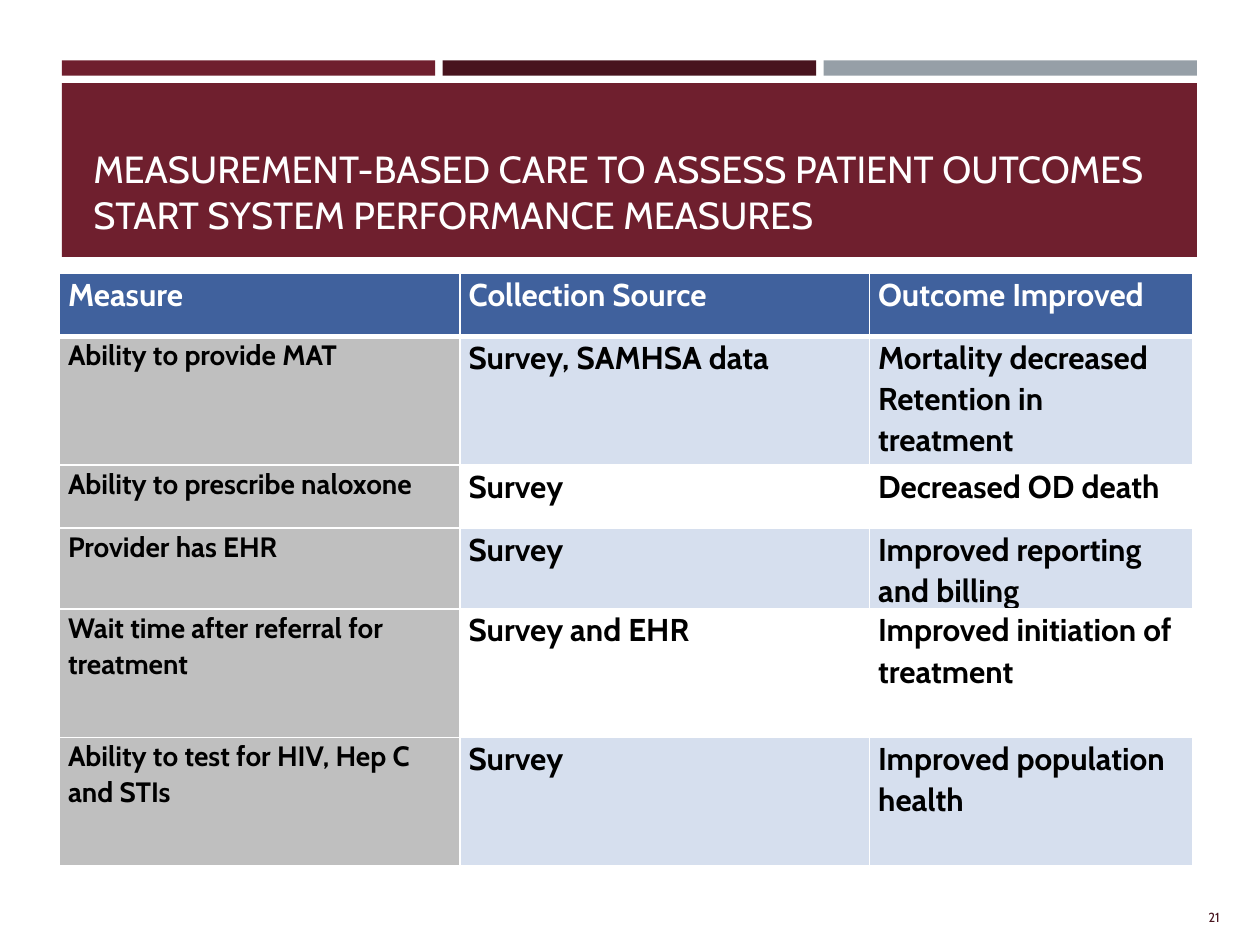
"""Build the slide on patient outcome measures for measurement-based care."""
from copy import deepcopy
from dataclasses import dataclass

from lxml.etree import SubElement
from pptx import Presentation
from pptx.dml.color import RGBColor
from pptx.enum.shapes import MSO_SHAPE
from pptx.enum.text import MSO_ANCHOR, MSO_AUTO_SIZE, PP_ALIGN
from pptx.oxml.ns import qn
from pptx.util import Inches, Pt


@dataclass(frozen=True)
class Theme:
    font: str = "Cabin"
    wine: str = "6F1F2E"
    dark_wine: str = "48141E"
    steel: str = "969FA7"
    header: str = "40619D"
    measure: str = "BFBFBF"
    band: str = "D6DFEE"
    white: str = "FFFFFF"
    black: str = "000000"
    title_size: float = 21.6
    table_size: float = 18
    measure_size: float = 16
    number_size: float = 7.5
    rule: float = 1
    header_rule: float = 3


GRID_COLUMNS, GRID_ROWS = 100, 75

MEASURES = [
    ("Measure", "Collection Source", "Outcome Improved"),
    ("Ability to provide MAT", "Survey, SAMHSA data",
     ["Mortality decreased", "Retention in treatment"]),
    ("Ability to prescribe naloxone", "Survey", "Decreased OD death"),
    ("Provider has EHR", "Survey", "Improved reporting and billing"),
    ("Wait time after referral for treatment", "Survey and EHR",
     "Improved initiation of treatment"),
    ("Ability to test for HIV, Hep C and STIs", "Survey", "Improved population health"),
]


def write(frame, text, *, font, size, color, bold=False, align=PP_ALIGN.LEFT, spacing=1.0):
    """Fill a text frame, one paragraph per list item, with one format."""
    frame.word_wrap = True
    for index, line in enumerate([text] if isinstance(text, str) else text):
        paragraph = frame.add_paragraph() if index else frame.paragraphs[0]
        paragraph.text = line
        paragraph.alignment = align
        paragraph.line_spacing = spacing
        paragraph.space_before = paragraph.space_after = Pt(0)
        for run in paragraph.runs:
            run.font.name, run.font.size, run.font.bold = font, Pt(size), bold
            run.font.color.rgb = RGBColor.from_string(color)
        for line_break in paragraph._p.findall(qn("a:br")):
            line_break.append(deepcopy(paragraph.runs[0]._r.rPr))


class SlideBuilder:
    """Place styled elements on the current slide by grid columns and rows."""

    def __init__(self, deck, theme):
        self.theme = theme
        self.column = deck.slide_width / GRID_COLUMNS
        self.row = deck.slide_height / GRID_ROWS
        self.slide = deck.slides.add_slide(deck.slide_layouts[5])

    def box(self, left, top, width, height):
        """Turn grid units into slide lengths."""
        return (round(left * self.column), round(top * self.row),
                round(width * self.column), round(height * self.row))

    def bar(self, *place, color):
        """Add a plain filled rectangle behind the title."""
        bar = self.slide.shapes.add_shape(MSO_SHAPE.RECTANGLE, *self.box(*place))
        bar.shadow.inherit = False
        bar.fill.solid()
        bar.fill.fore_color.rgb = RGBColor.from_string(color)
        bar.line.fill.background()

    def title(self, text, *place):
        """Move the title placeholder to the front and format it."""
        title = self.slide.shapes.title
        title.left, title.top, title.width, title.height = self.box(*place)
        self.slide.shapes._spTree.append(title._element)
        title.text_frame.auto_size = MSO_AUTO_SIZE.NONE
        title.text_frame.vertical_anchor = MSO_ANCHOR.BOTTOM
        write(title.text_frame, text, font=self.theme.font,
              size=self.theme.title_size, color=self.theme.white)

    def page_number(self, text, *place):
        """Add the slide number in the corner."""
        number = self.slide.shapes.add_textbox(*self.box(*place))
        number.text_frame.vertical_anchor = MSO_ANCHOR.MIDDLE
        write(number.text_frame, text, font=self.theme.font, size=self.theme.number_size,
              color=self.theme.dark_wine, align=PP_ALIGN.RIGHT)

    def table(self, records, left, top, widths, heights):
        """Add the table with a header, a shaded first column and banded rows."""
        table = self.slide.shapes.add_table(
            len(heights), len(widths),
            *self.box(left, top, sum(widths), sum(heights))).table
        for column, width in zip(table.columns, widths):
            column.width = round(width * self.column)
        for row, height in zip(table.rows, heights):
            row.height = round(height * self.row)
        for r, record in enumerate(records):
            for c, text in enumerate(record):
                self.cell(table.cell(r, c), text, r, c)

    def cell(self, cell, text, r, c):
        """Write, border and fill one table cell."""
        theme = self.theme
        is_header, is_measure = r == 0, r > 0 and c == 0
        cell.margin_left = cell.margin_right = Inches(0.07)
        cell.margin_top = cell.margin_bottom = 0
        write(cell.text_frame, text, font=theme.font, bold=True, spacing=1.07,
              size=theme.measure_size if is_measure else theme.table_size,
              color=theme.white if is_header else theme.black)
        rules = {"lnL": theme.rule, "lnR": theme.rule,
                 "lnT": theme.header_rule if r == 1 else theme.rule,
                 "lnB": theme.header_rule if is_header else theme.rule}
        for side, weight in rules.items():
            line = SubElement(cell._tc.get_or_add_tcPr(), qn(f"a:{side}"), w=str(Pt(weight)))
            SubElement(SubElement(line, qn("a:solidFill")), qn("a:srgbClr"), val=theme.white)
        body_fill = theme.band if r % 2 else theme.white
        fill = theme.header if is_header else theme.measure if is_measure else body_fill
        cell.fill.solid()
        cell.fill.fore_color.rgb = RGBColor.from_string(fill)


def main():
    """Compose and save the slide."""
    deck = Presentation()
    deck.slide_width, deck.slide_height = Inches(10), Inches(7.5)
    theme = Theme()
    builder = SlideBuilder(deck, theme)

    left, width, gap = 4.9, 90.1, 0.6
    bar_width = (width - 2 * gap) / 3
    for index, color in enumerate((theme.wine, theme.dark_wine, theme.steel)):
        builder.bar(left + index * (bar_width + gap), 4.8, bar_width, 1.2, color=color)
    builder.bar(left, 6.6, width, 13.8, color=theme.wine)

    builder.title("""MEASUREMENT-BASED CARE TO ASSESS PATIENT OUTCOMES
START SYSTEM PERFORMANCE MEASURES""", 6.4, 7.5, 87.4, 11.8)
    builder.page_number("21", 89.4, 70.8, 8.4, 4)
    short, tall = 5, 10.2
    builder.table(MEASURES, 4.7, 21.7, widths=(31.8, 32.5, 25.7),
                  heights=(short, tall, short, short, tall, tall))
    deck.save("out.pptx")


if __name__ == "__main__":
    main()
